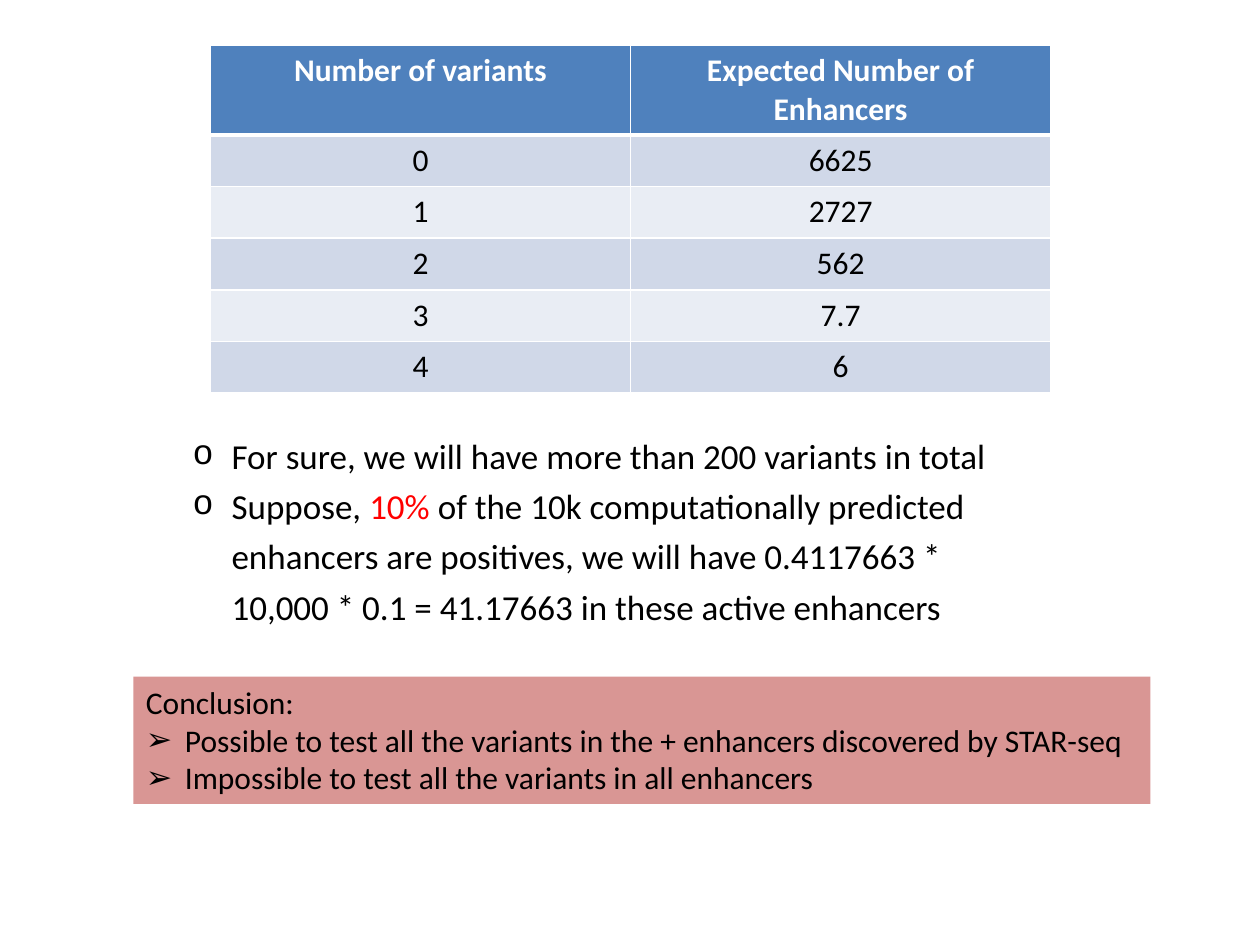
from lxml import etree
from pptx import Presentation
from pptx.dml.color import RGBColor
from pptx.enum import shapes, text
from pptx.oxml.ns import qn
from pptx.util import Inches, Pt

FONT = "Calibri"
BLACK, WHITE, RED = "000000", "FFFFFF", "FF0000"
HEADER_BLUE, BANDS = "4F81BD", ("D0D8E8", "E9EDF4")
ROSE = "D99694"

ROWS = [
    ("Number of variants", "Expected Number of Enhancers"),
    ("0", "6625"),
    ("1", "2727"),
    ("2", "562"),
    ("3", "7.7"),
    ("4", "6"),
]


def paint(color_format, color):
    color_format.rgb = RGBColor.from_string(color)


def fill_solid(item, color):
    item.fill.solid()
    paint(item.fill.fore_color, color)


def set_font(paragraph, size, color=BLACK, bold=False):
    font = paragraph.font
    font.name, font.size, font.bold = FONT, Pt(size), bold
    paint(font.color, color)


def add_bullet(paragraph, character, typeface):
    properties = paragraph._p.get_or_add_pPr()
    properties.set("marL", str(Inches(0.31)))
    properties.set("indent", str(-Inches(0.31)))
    etree.SubElement(properties, qn("a:buFont"), typeface=typeface)
    etree.SubElement(properties, qn("a:buChar"), char=character)


def set_borders(cell, bottom_width):
    properties = cell._tc.get_or_add_tcPr()
    widths = {"a:lnL": 1, "a:lnR": 1, "a:lnT": 1, "a:lnB": bottom_width}
    for position, (side, width) in enumerate(widths.items()):
        line = etree.Element(qn(side), w=str(Pt(width)))
        solid = etree.SubElement(line, qn("a:solidFill"))
        etree.SubElement(solid, qn("a:srgbClr"), val=WHITE)
        properties.insert(position, line)


def add_variant_table(slide, left, top, width, height):
    frame = slide.shapes.add_table(len(ROWS), len(ROWS[0]), left, top, width, height)
    table = frame.table
    for row_index, values in enumerate(ROWS):
        is_header = row_index == 0
        table.rows[row_index].height = Inches(0.41)
        for column_index, value in enumerate(values):
            cell = table.cell(row_index, column_index)
            cell.text = value
            fill_solid(cell, HEADER_BLUE if is_header else BANDS[(row_index - 1) % 2])
            set_borders(cell, 3 if is_header else 1)
            paragraph = cell.text_frame.paragraphs[0]
            paragraph.alignment = text.PP_ALIGN.CENTER
            set_font(paragraph, 18, WHITE if is_header else BLACK, is_header)


def add_estimate(slide, left, top, width, height):
    frame = slide.shapes.add_textbox(left, top, width, height).text_frame
    frame.word_wrap = True
    first, second = frame.paragraphs[0], frame.add_paragraph()
    first.text = "For sure, we will have more than 200 variants in total"
    second.add_run().text = "Suppose, "
    share = second.add_run()
    share.text = "10%"
    paint(share.font.color, RED)
    second.add_run().text = (
        " of the 10k computationally predicted enhancers are positives, "
        "we will have 0.4117663 * 10,000 * 0.1 = 41.17663 in these active enhancers"
    )
    for paragraph in (first, second):
        paragraph.line_spacing = 1.2
        add_bullet(paragraph, "o", "Courier New")
        set_font(paragraph, 20)


def add_conclusion(slide, left, top, width, height):
    box = slide.shapes.add_shape(shapes.MSO_SHAPE.RECTANGLE, left, top, width, height)
    box.shadow.inherit = False
    fill_solid(box, ROSE)
    box.line.fill.background()
    frame = box.text_frame
    frame.word_wrap = False
    frame.vertical_anchor = text.MSO_ANCHOR.TOP
    frame.text = (
        "Conclusion:\n"
        "Possible to test all the variants in the + enhancers discovered by STAR-seq\n"
        "Impossible to test all the variants in all enhancers"
    )
    for index, paragraph in enumerate(frame.paragraphs):
        paragraph.alignment = text.PP_ALIGN.LEFT
        if index > 0:
            add_bullet(paragraph, "➢", "Arial")
        set_font(paragraph, 18)


def main():
    presentation = Presentation()
    presentation.slide_width, presentation.slide_height = Inches(10), Inches(7.5)
    slide = presentation.slides.add_slide(presentation.slide_layouts[6])

    # Expected enhancers for each number of variants
    add_variant_table(slide, Inches(1.67), Inches(0.36), Inches(6.67), Inches(2.46))
    # Estimate of variants in active enhancers
    add_estimate(slide, Inches(1.43), Inches(3.33), Inches(6.9), Inches(1.71))
    # Conclusion panel
    add_conclusion(slide, Inches(1.06), Inches(5.37), Inches(8.07), Inches(1.01))

    presentation.save("out.pptx")


if __name__ == "__main__":
    main()
